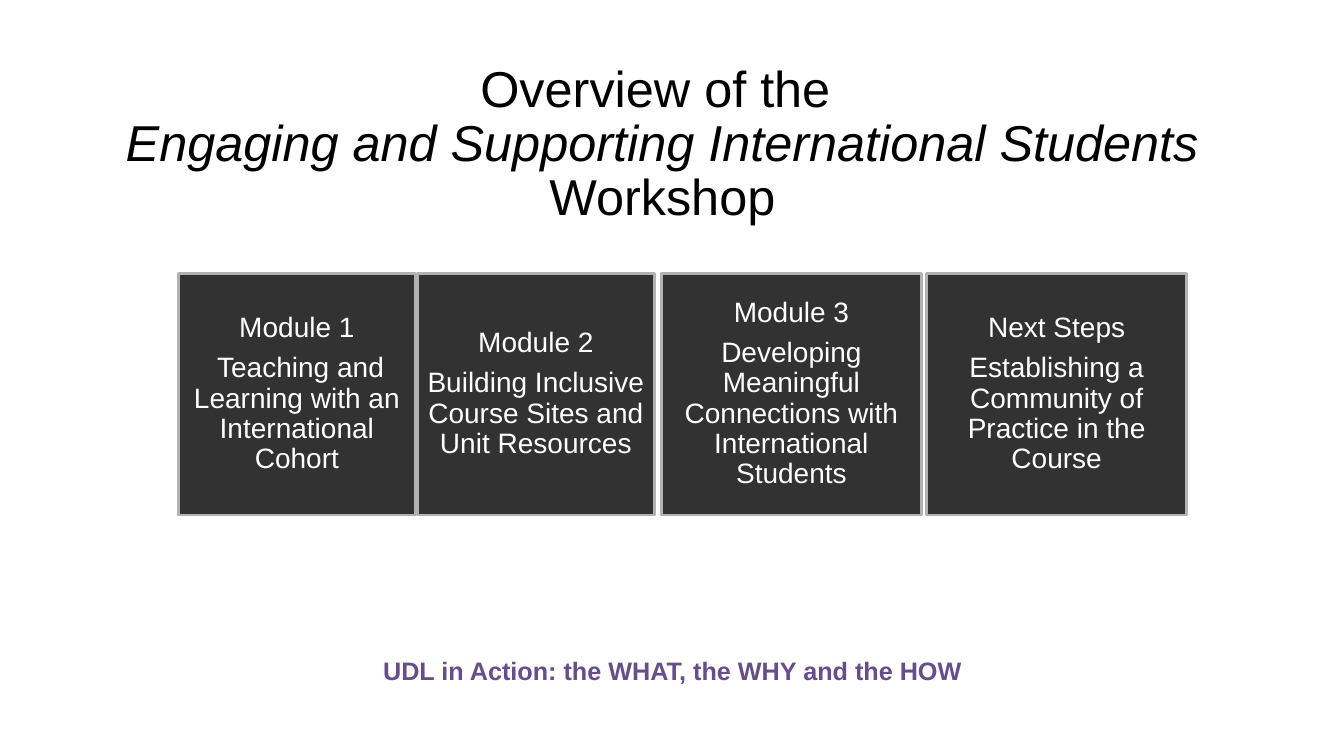
"""Build the workshop overview slide with its four module boxes."""
from copy import deepcopy

from pptx import Presentation
from pptx.dml.color import RGBColor
from pptx.enum.shapes import MSO_SHAPE
from pptx.enum.text import MSO_ANCHOR, MSO_AUTO_SIZE, PP_ALIGN
from pptx.util import Inches, Pt


def color(hex_code):
    return RGBColor.from_string(hex_code)


def style(font, size, hex_code):
    font.name = "Arial"
    font.size = Pt(size)
    font.color.rgb = color(hex_code)


deck = Presentation()
deck.slide_width = Inches(13.33)
deck.slide_height = Inches(7.5)
slide = deck.slides.add_slide(deck.slide_layouts[5])

tagline = slide.shapes.add_textbox(Inches(3.67), Inches(6.45), Inches(6), Inches(0.4))
tagline.text_frame.text = "UDL in Action: the WHAT, the WHY and the HOW"
tagline_line = tagline.text_frame.paragraphs[0]
tagline_line.alignment = PP_ALIGN.CENTER
style(tagline_line.runs[0].font, 18, "664D8C")
tagline_line.runs[0].font.bold = True

heading = slide.shapes.title
heading.left, heading.top = Inches(0), Inches(0.58)
heading.width, heading.height = Inches(13.14), Inches(1.1)
heading.text_frame.auto_size = MSO_AUTO_SIZE.NONE
heading.text_frame.vertical_anchor = MSO_ANCHOR.TOP
heading.text_frame.text = "Overview of the \v"
heading_line = heading.text_frame.paragraphs[0]
heading_line.alignment = PP_ALIGN.CENTER
heading_line.line_spacing = 0.9
for words in ("Engaging and Supporting International Students", " Workshop"):
    heading_line.add_run().text = words
for run in heading_line.runs:
    style(run.font, 36, "000000")
first_run, workshop_name, _ = heading_line.runs
line_break = first_run._r.getnext()
line_break.append(deepcopy(first_run._r.rPr))
workshop_name.font.italic = True

modules = [
    (1.77, 2.35, "Module 1", " Teaching and Learning with an International Cohort"),
    (4.14, 2.35, "Module 2", "Building Inclusive Course Sites and Unit Resources"),
    (6.56, 2.58, "Module 3", "Developing Meaningful Connections with International Students"),
    (9.19, 2.58, "Next Steps", "Establishing a Community of Practice in the Course"),
]
for left, width, label, topic in modules:
    module = slide.shapes.add_shape(
        MSO_SHAPE.RECTANGLE, Inches(left), Inches(2.71), Inches(width), Inches(2.4))
    module.shadow.inherit = False
    module.fill.solid()
    module.fill.fore_color.rgb = color("323232")
    module.line.color.rgb = color("B2B2B2")
    module.line.width = Pt(2)
    frame = module.text_frame
    frame.word_wrap = True
    frame.vertical_anchor = MSO_ANCHOR.MIDDLE
    frame.margin_left = frame.margin_right = Inches(0.05)
    frame.margin_top = frame.margin_bottom = Inches(0.05)
    frame.text = f"{label}\n{topic}"
    for paragraph in frame.paragraphs:
        paragraph.alignment = PP_ALIGN.CENTER
        paragraph.line_spacing = 0.9
        paragraph.space_after = Pt(7)
        style(paragraph.runs[0].font, 20, "FFFFFF")

deck.save("out.pptx")
